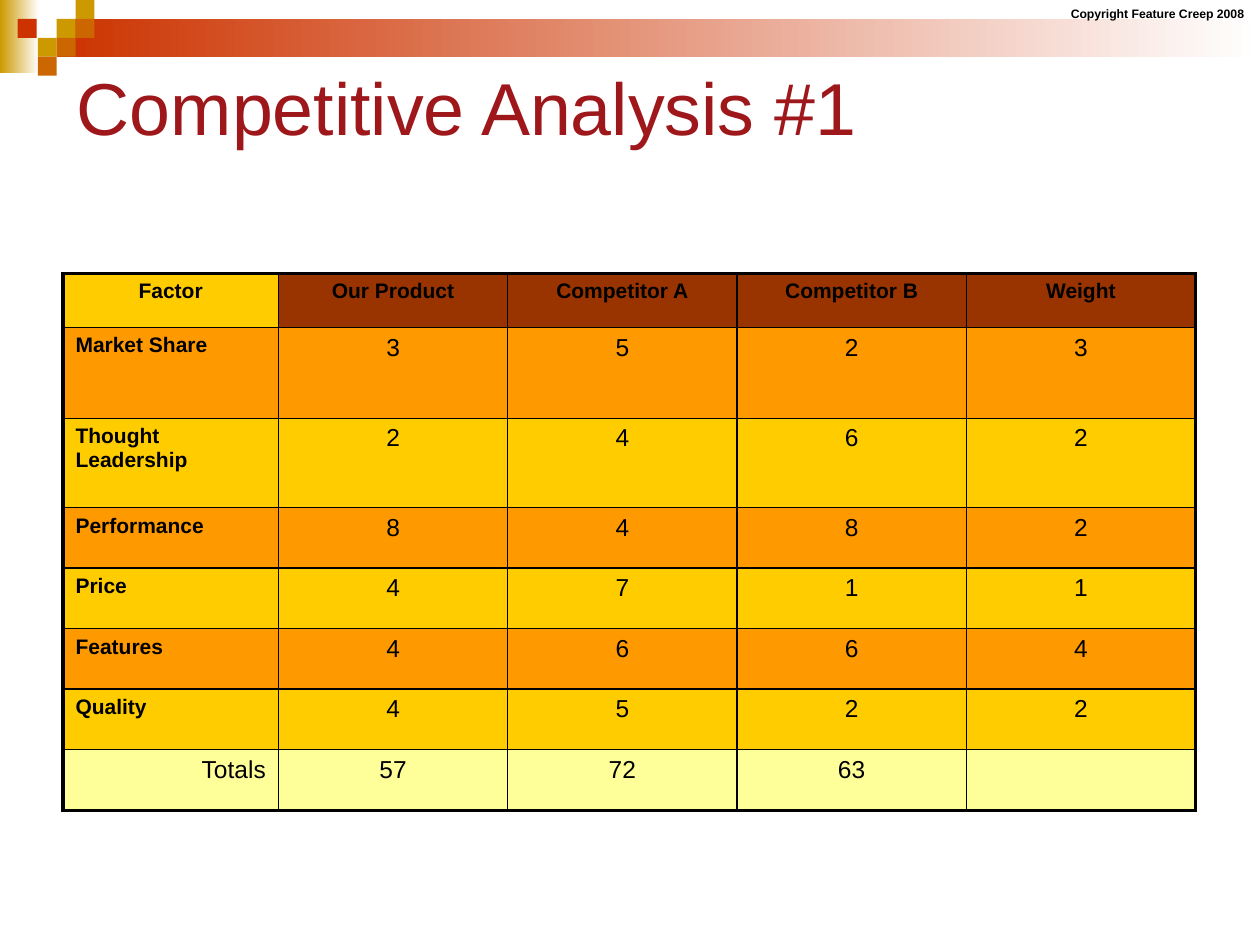
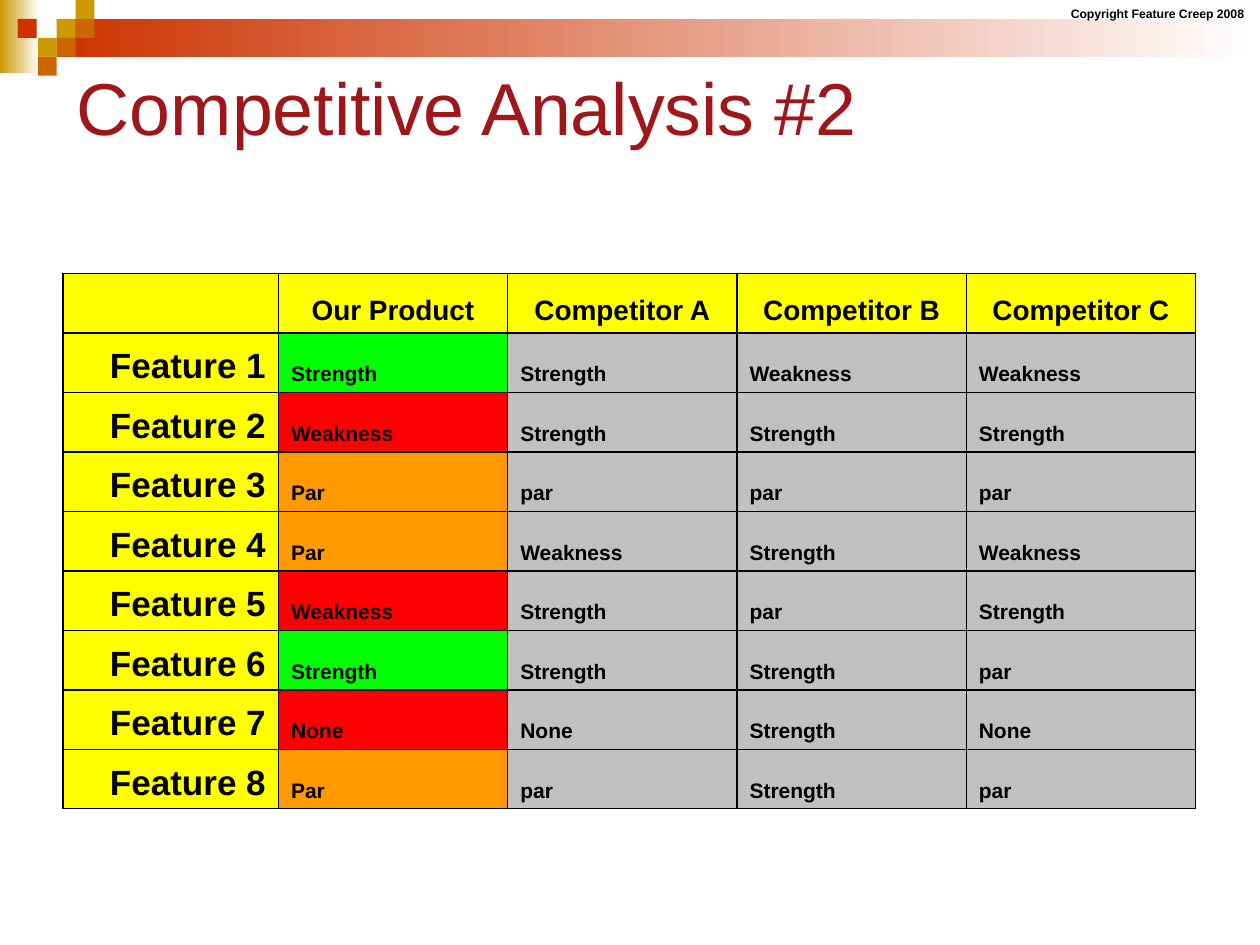
from lxml import etree
from pptx import Presentation
from pptx import util as u
from pptx.dml.color import RGBColor
from pptx.enum import shapes, text
from pptx.oxml import ns

BLACK = RGBColor(0x00, 0x00, 0x00)
WHITE = RGBColor(0xFF, 0xFF, 0xFF)
MAROON = RGBColor(0x9E, 0x17, 0x1B)
OCHRE = RGBColor(0xCC, 0x99, 0x00)
BRICK = RGBColor(0xCC, 0x33, 0x00)
COPPER = RGBColor(0xCC, 0x66, 0x00)
BROWN = RGBColor(0x99, 0x33, 0x00)
GOLD = RGBColor(0xFF, 0xCC, 0x00)
ORANGE = RGBColor(0xFF, 0x99, 0x00)
CREAM = RGBColor(0xFF, 0xFF, 0x99)
YELLOW = RGBColor(0xFF, 0xFF, 0x00)
GREEN = RGBColor(0x00, 0xFF, 0x00)
RED = RGBColor(0xFF, 0x00, 0x00)
GREY = RGBColor(0xC0, 0xC0, 0xC0)

LEFT, MID, RIGHT = text.PP_ALIGN.LEFT, text.PP_ALIGN.CENTER, text.PP_ALIGN.RIGHT
TOP, BASE = text.MSO_ANCHOR.TOP, text.MSO_ANCHOR.BOTTOM

TILE = 0.15
TILES = [(0.45, 0.15, OCHRE), (0.6, 0, OCHRE), (0.6, 0.15, COPPER),
         (0.3, 0.3, OCHRE), (0.14, 0.15, BRICK), (0.45, 0.3, COPPER),
         (0.3, 0.45, COPPER)]
BANDS = [((0, 0, 0.31, 0.58), OCHRE), ((0.45, 0.15, 9.55, 0.3), BRICK)]
COLS = [1.71] + [1.82] * 4

SCORES = [
    ["Factor", "Our Product", "Competitor A", "Competitor B", "Weight"],
    ["Market Share", "3", "5", "2", "3"],
    ["Thought Leadership", "2", "4", "6", "2"],
    ["Performance", "8", "4", "8", "2"],
    ["Price", "4", "7", "1", "1"],
    ["Features", "4", "6", "6", "4"],
    ["Quality", "4", "5", "2", "2"],
    ["Totals", "57", "72", "63", ""],
]
RATINGS = [
    ["", "Our Product", "Competitor A", "Competitor B", "Competitor C"],
    ["Feature 1", "Strength", "Strength", "Weakness", "Weakness"],
    ["Feature 2", "Weakness", "Strength", "Strength", "Strength"],
    ["Feature 3", "Par", "par", "par", "par"],
    ["Feature 4", "Par", "Weakness", "Strength", "Weakness"],
    ["Feature 5", "Weakness", "Strength", "par", "Strength"],
    ["Feature 6", "Strength", "Strength", "Strength", "par"],
    ["Feature 7", "None", "None", "Strength", "None"],
    ["Feature 8", "Par", "par", "Strength", "par"],
]
MARKS = {"Strength": GREEN, "Weakness": RED, "None": RED, "Par": ORANGE}


def apply(item, values):
    for name, value in values.items():
        setattr(item, name, value)


def style(par, size, color=BLACK, bold=False, align=LEFT):
    par.alignment = align
    apply(par.font, {"name": "Arial", "size": u.Pt(size), "bold": bold})
    par.font.color.rgb = color


def add_rect(slide, box, color, fade=False):
    rect = slide.shapes.add_shape(shapes.MSO_SHAPE.RECTANGLE, *map(u.Inches, box))
    rect.shadow.inherit = False
    rect.line.fill.background()
    if fade:
        rect.fill.gradient()
        rect.fill.gradient_angle = 0
        for stop, shade in zip(rect.fill.gradient_stops, (color, WHITE)):
            stop.color.rgb = shade
    else:
        rect.fill.solid()
        rect.fill.fore_color.rgb = color


def add_notice(slide):
    box = slide.shapes.add_textbox(*map(u.Inches, (8.4, 0, 1.6, 0.22)))
    frame = box.text_frame
    frame.text = "Copyright Feature Creep 2008"
    apply(frame, {"word_wrap": False,
                  "auto_size": text.MSO_AUTO_SIZE.SHAPE_TO_FIT_TEXT})
    style(frame.paragraphs[0], 7, bold=True)


def add_page(deck, title):
    slide = deck.slides.add_slide(deck.slide_layouts[5])
    for box, color in BANDS:
        add_rect(slide, box, color, fade=True)
    for left, top, color in TILES:
        add_rect(slide, (left, top, TILE, TILE), color)
    add_notice(slide)
    head = slide.shapes.title
    apply(head, {"left": u.Inches(0.51), "top": u.Inches(0.42),
                 "width": u.Inches(9), "height": u.Inches(0.84)})
    frame = head.text_frame
    frame.text = title
    apply(frame, {"vertical_anchor": text.MSO_ANCHOR.MIDDLE, "word_wrap": True,
                  "auto_size": text.MSO_AUTO_SIZE.NONE})
    style(frame.paragraphs[0], 42, MAROON)
    return slide


def add_edges(cell, widths):
    props = cell._tc.get_or_add_tcPr()
    for side, width in zip("LRTB", widths):
        line = etree.SubElement(props, ns.qn(f"a:ln{side}"), w=str(u.Pt(width)))
        fill = etree.SubElement(line, ns.qn("a:solidFill"))
        etree.SubElement(fill, ns.qn("a:srgbClr"), val=str(BLACK))


def add_grid(slide, data, heights, look, rim, anchor):
    box = map(u.Inches, (0.5, 2.17, 9, 4.25))
    grid = slide.shapes.add_table(len(data), len(COLS), *box).table
    apply(grid, {"first_row": False, "horz_banding": False})
    for col, width in zip(grid.columns, COLS):
        col.width = u.Inches(width)
    for row, height in zip(grid.rows, heights):
        row.height = u.Inches(height)
    last = len(data) - 1, len(COLS) - 1
    for r, row in enumerate(data):
        for c, word in enumerate(row):
            cell = grid.cell(r, c)
            outer = c == 0, c == last[1], r == 0, r == last[0]
            add_edges(cell, [rim if edge else 1 for edge in outer])
            color, form = look(r, c, word)
            cell.fill.solid()
            cell.fill.fore_color.rgb = color
            cell.vertical_anchor = anchor
            cell.text = word
            style(cell.text_frame.paragraphs[0], **form)


def score_look(r, c, word):
    if r == 0:
        return (BROWN if c else GOLD), {"size": 12, "bold": True, "align": MID}
    if r == len(SCORES) - 1:
        return CREAM, {"size": 14, "align": MID if c else RIGHT}
    color = ORANGE if r % 2 else GOLD
    if c == 0:
        return color, {"size": 12, "bold": True}
    return color, {"size": 14, "align": MID}


def rating_look(r, c, word):
    if r == 0:
        return YELLOW, {"size": 16, "bold": True, "align": MID}
    if c == 0:
        return YELLOW, {"size": 20, "bold": True, "align": RIGHT}
    return (MARKS[word] if c == 1 else GREY), {"size": 12, "bold": True}


def main():
    deck = Presentation()
    apply(deck, {"slide_width": u.Inches(10), "slide_height": u.Inches(7.5)})
    page = add_page(deck, "Competitive Analysis #1")
    add_grid(page, SCORES, [0.43, 0.72, 0.71] + [0.48] * 5, score_look, 2, TOP)
    page = add_page(deck, "Competitive Analysis #2")
    add_grid(page, RATINGS, [4.25 / len(RATINGS)] * len(RATINGS),
             rating_look, 1, BASE)
    deck.save("out.pptx")


if __name__ == "__main__":
    main()
